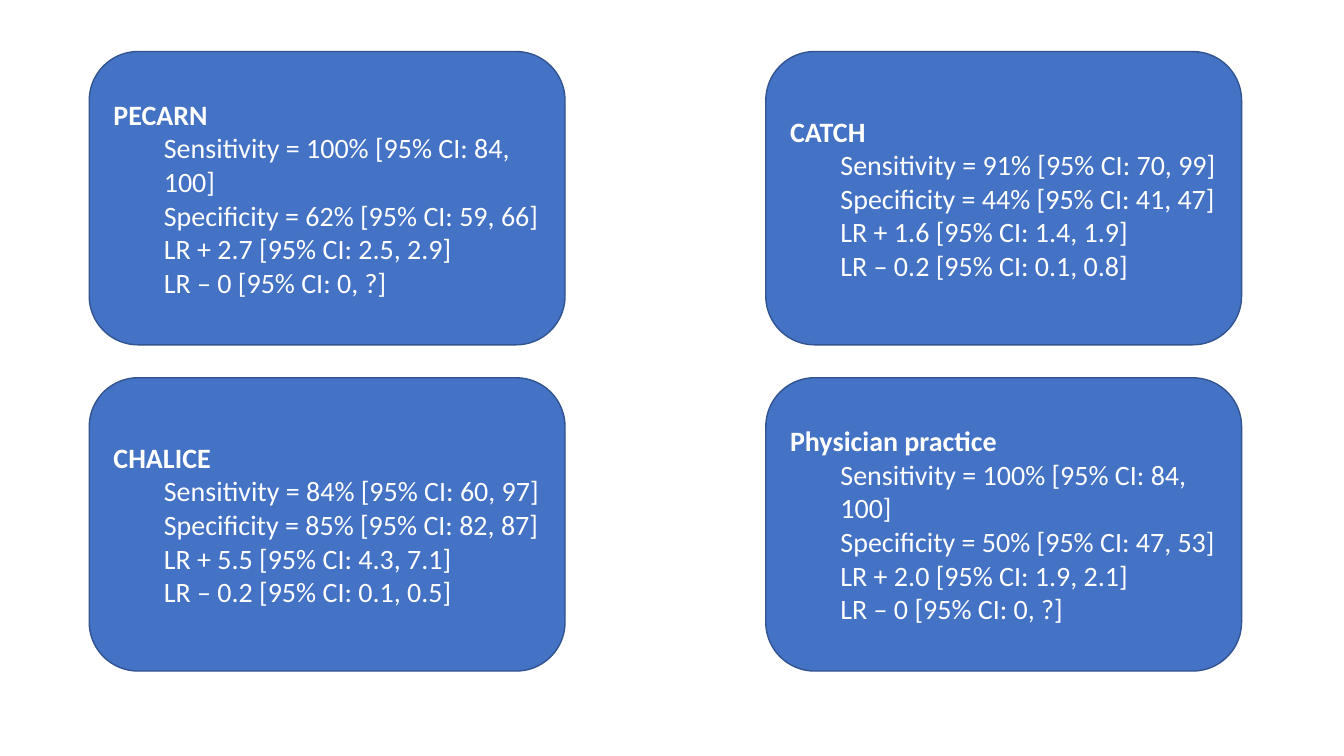
from pptx import Presentation
from pptx import util as u
from pptx.dml.color import RGBColor
from pptx.enum import shapes, text

# Content: rule name and its test accuracy, row by row
RULES = [
    ("PECARN", ["Sensitivity = 100% [95% CI: 84, 100]",
                "Specificity = 62% [95% CI: 59, 66]",
                "LR + 2.7 [95% CI: 2.5, 2.9]",
                "LR – 0 [95% CI: 0, ?]"]),
    ("CATCH", ["Sensitivity = 91% [95% CI: 70, 99]",
               "Specificity = 44% [95% CI: 41, 47]",
               "LR + 1.6 [95% CI: 1.4, 1.9]",
               "LR – 0.2 [95% CI: 0.1, 0.8]"]),
    ("CHALICE", ["Sensitivity = 84% [95% CI: 60, 97]",
                 "Specificity = 85% [95% CI: 82, 87]",
                 "LR + 5.5 [95% CI: 4.3, 7.1]",
                 "LR – 0.2 [95% CI: 0.1, 0.5]"]),
    ("Physician practice", ["Sensitivity = 100% [95% CI: 84, 100]",
                            "Specificity = 50% [95% CI: 47, 53]",
                            "LR + 2.0 [95% CI: 1.9, 2.1]",
                            "LR – 0 [95% CI: 0, ?]"]),
]

BLUE = RGBColor(0x44, 0x72, 0xC4)
DARK_BLUE = RGBColor(0x32, 0x54, 0x91)
WHITE = RGBColor(0xFF, 0xFF, 0xFF)

# Grid of cards, in centimetres
COLUMNS = 2
LEFT, TOP = 2.25, 1.3
CARD_W, CARD_H = 11.99, 7.39
STEP_X, STEP_Y = 17.05, 8.22
INDENT = u.Cm(1.27)


def add_line(p, words, heading):
    p.alignment = text.PP_ALIGN.LEFT
    if not heading:
        p.level = 1
        pPr = p._p.get_or_add_pPr()
        pPr.set("marL", str(INDENT))
        pPr.set("indent", "0")
    r = p.add_run()
    r.text = words
    r.font.name = "Calibri"
    r.font.size = u.Pt(20)
    r.font.bold = heading
    r.font.color.rgb = WHITE


def add_card(s, left, top, name, results):
    sp = s.shapes.add_shape(shapes.MSO_SHAPE.ROUNDED_RECTANGLE, u.Cm(left),
                            u.Cm(top), u.Cm(CARD_W), u.Cm(CARD_H))
    sp.shadow.inherit = False
    sp.fill.solid()
    sp.fill.fore_color.rgb = BLUE
    sp.line.color.rgb = DARK_BLUE
    sp.line.width = u.Pt(1)
    tf = sp.text_frame
    tf.word_wrap = True
    tf.vertical_anchor = text.MSO_ANCHOR.MIDDLE
    add_line(tf.paragraphs[0], name, True)
    for result in results:
        add_line(tf.add_paragraph(), result, False)


def main():
    prs = Presentation()
    prs.slide_width, prs.slide_height = u.Cm(33.87), u.Cm(19.05)
    s = prs.slides.add_slide(prs.slide_layouts[6])
    for i, (name, results) in enumerate(RULES):
        row, col = divmod(i, COLUMNS)
        add_card(s, LEFT + col * STEP_X, TOP + row * STEP_Y, name, results)
    prs.save("out.pptx")


if __name__ == "__main__":
    main()
